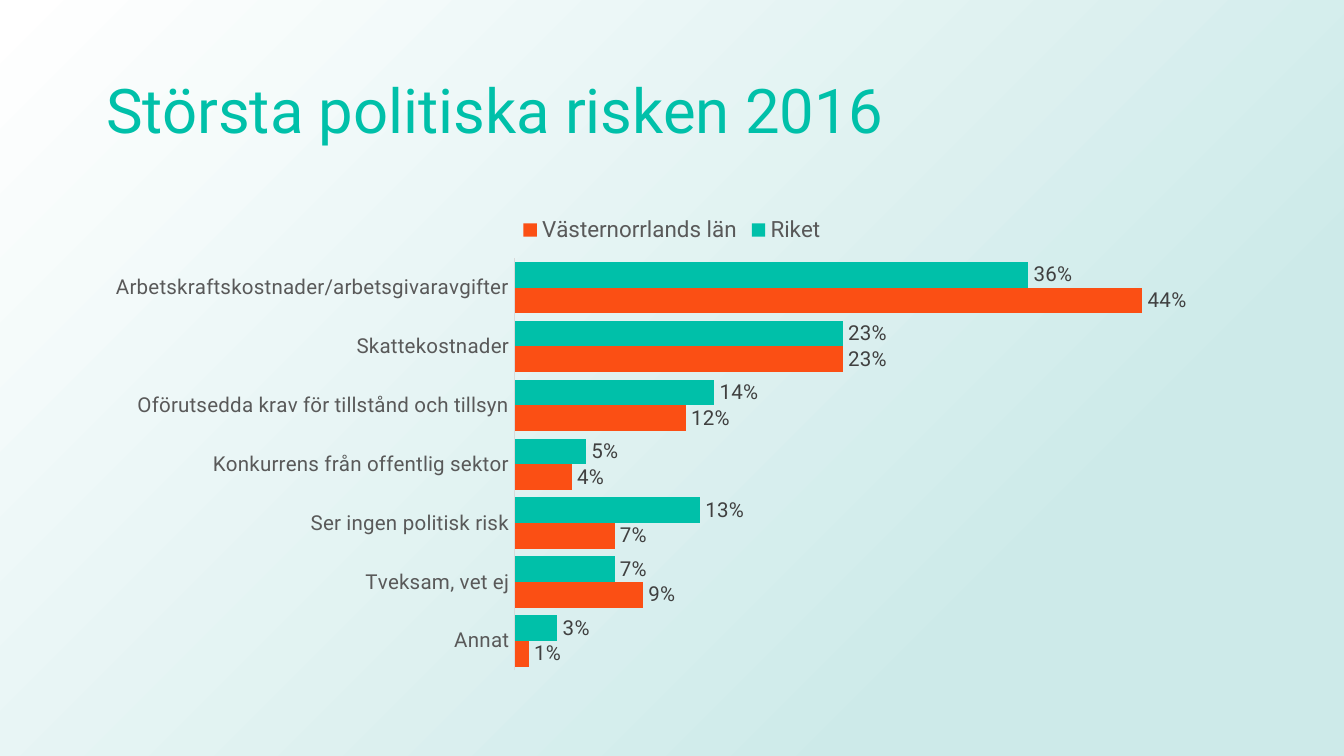
from lxml.etree import SubElement
from pptx import Presentation
from pptx.chart.data import CategoryChartData
from pptx.dml.color import RGBColor
from pptx.enum.chart import (XL_CHART_TYPE, XL_LABEL_POSITION,
                             XL_LEGEND_POSITION, XL_TICK_MARK)
from pptx.enum.text import MSO_ANCHOR, PP_ALIGN
from pptx.oxml.ns import qn
from pptx.util import Pt

TEAL, ORANGE, MIST, WHITE = "00C0A9", "FB4F14", "CDEAE9", "FFFFFF"
DARK, GREY, PALE = "404040", "595959", "D9D9D9"
LEFT, WIDTH = 49.7, 620.6

CATEGORIES = [
    "Arbetskraftskostnader/arbetsgivaravgifter",
    "Skattekostnader",
    "Oförutsedda krav för tillstånd och tillsyn",
    "Konkurrens från offentlig sektor",
    "Ser ingen politisk risk",
    "Tveksam, vet ej",
    "Annat",
]
SERIES = [
    ("Riket", TEAL, [0.36, 0.23, 0.14, 0.05, 0.13, 0.07, 0.03]),
    ("Västernorrlands län", ORANGE,
     [0.44, 0.23, 0.12, 0.04, 0.07, 0.09, 0.01]),
]


def rgb(color):
    return RGBColor.from_string(color)


class Deck:
    font_name = "Roboto"

    def __init__(self, width, height):
        self.prs = Presentation()
        self.prs.slide_width, self.prs.slide_height = Pt(width), Pt(height)
        self.s = self.prs.slides.add_slide(self.prs.slide_layouts[5])

    def style(self, font, size, color):
        font.name, font.size = self.font_name, Pt(size)
        font.color.rgb = rgb(color)

    def background(self, inner, outer):
        """Radial gradient that spreads from the bottom right corner."""
        fill = self.s.background.fill
        fill.gradient()
        stops = zip(fill.gradient_stops, (0.23, 1), (inner, outer))
        for stop, position, color in stops:
            stop.position, stop.color.rgb = position, rgb(color)
        grad = next(self.s.background._cSld.iter(qn("a:gradFill")))
        grad.remove(grad.find(qn("a:lin")))
        path = SubElement(grad, qn("a:path"), {"path": "circle"})
        SubElement(path, qn("a:fillToRect"), l="100000", t="100000")

    def title(self, text, x, y, w, h):
        sp = self.s.shapes.title
        sp.left, sp.top, sp.width, sp.height = map(Pt, (x, y, w, h))
        tf = sp.text_frame
        tf.text = text
        tf.vertical_anchor = MSO_ANCHOR.MIDDLE
        p = tf.paragraphs[0]
        p.alignment, p.line_spacing = PP_ALIGN.LEFT, 0.9
        self.style(p.font, 33, TEAL)

    def bar_chart(self, categories, series, x, y, w, h):
        data = CategoryChartData(number_format="0%")
        data.categories = categories
        for name, _, values in series:
            data.add_series(name, values)
        chart = self.s.shapes.add_chart(
            XL_CHART_TYPE.BAR_CLUSTERED, *map(Pt, (x, y, w, h)), data).chart
        chart.has_title = False
        chart.font.name, chart.font.size = "Calibri", Pt(10)

        chart.has_legend = True
        legend = chart.legend
        legend.position = XL_LEGEND_POSITION.TOP
        legend.include_in_layout = False
        self.style(legend.font, 12, GREY)

        axis = chart.category_axis
        axis.reverse_order = True
        axis.major_tick_mark = axis.minor_tick_mark = XL_TICK_MARK.NONE
        axis.format.line.color.rgb = rgb(PALE)
        axis.format.line.width = Pt(0.75)
        self.style(axis.tick_labels.font, 11, GREY)
        chart.value_axis.visible = False
        chart.value_axis.has_major_gridlines = False

        plot = chart.plots[0]
        plot.gap_width, plot.overlap = 30, 0
        plot.vary_by_categories = False
        for bars, (_, color, _) in zip(plot.series, series):
            bars.format.fill.solid()
            bars.format.fill.fore_color.rgb = rgb(color)
            labels = bars.data_labels
            labels.show_value = True
            labels.number_format = "0%"
            labels.number_format_is_linked = False
            labels.position = XL_LABEL_POSITION.OUTSIDE_END
            self.style(labels.font, 11, DARK)


deck = Deck(720, 405)
deck.background(MIST, WHITE)
deck.title("Största politiska risken 2016", LEFT, 21.6, WIDTH, 78.5)
deck.bar_chart(CATEGORIES, SERIES, LEFT, 108, WIDTH, 256.3)
deck.prs.save("out.pptx")
